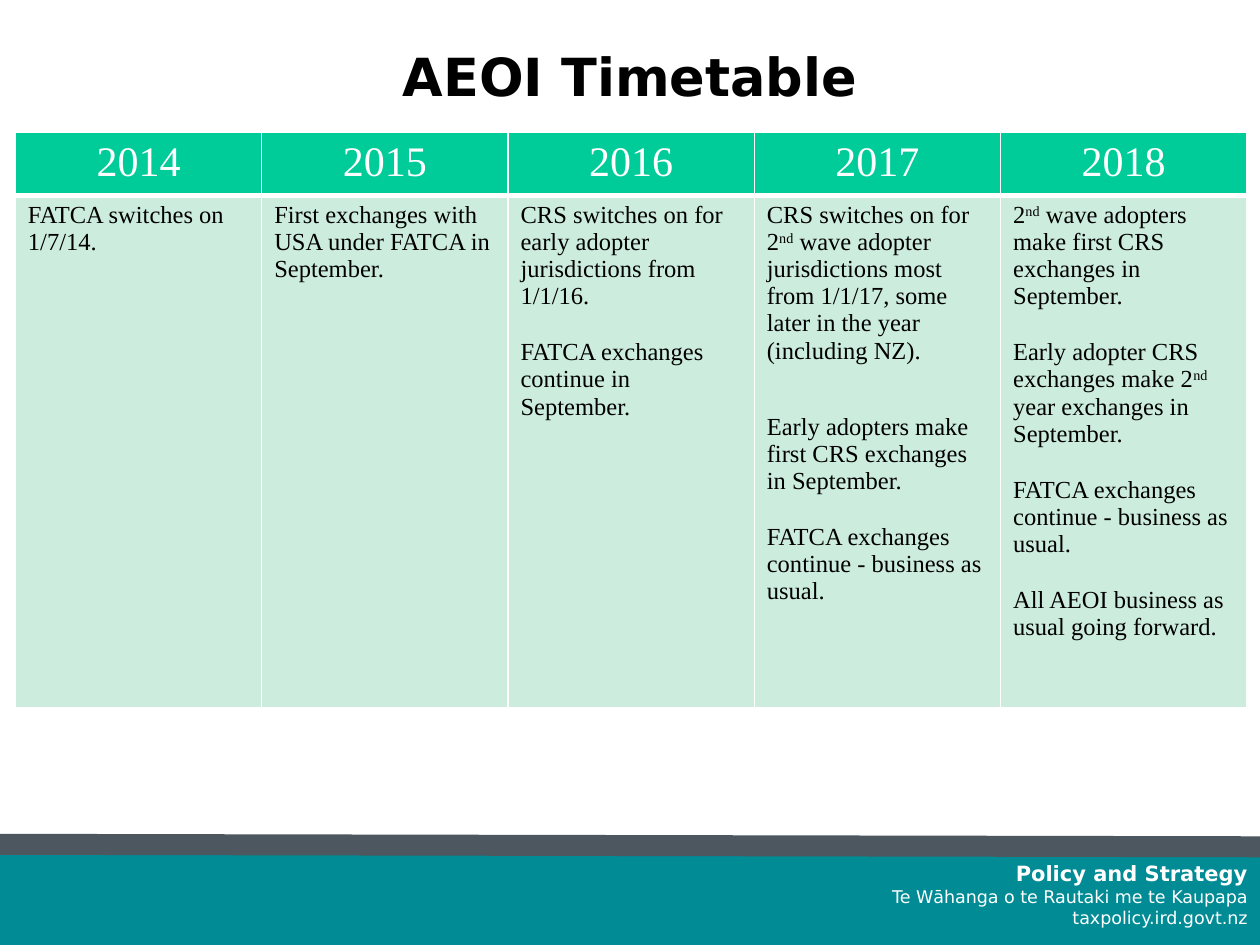
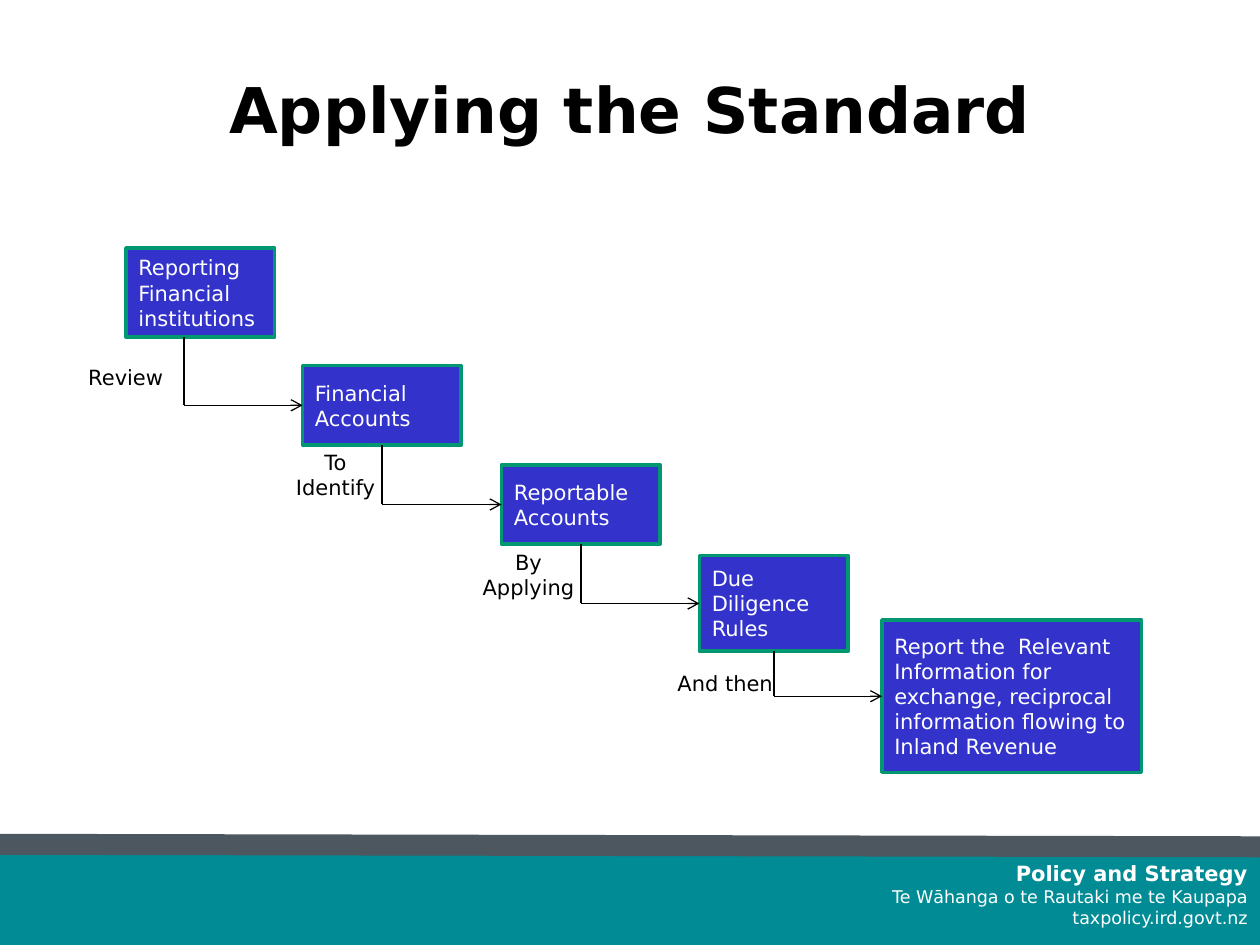
from itertools import pairwise

from lxml import etree
from pptx import Presentation
from pptx import util as u
from pptx.dml import color
from pptx.enum import shapes, text
from pptx.oxml import ns

COLOURS = {
    "teal": "008B95", "slate": "4C575F", "white": "FFFFFF", "black": "000000",
    "header": "00CC99", "mint": "CCECDE", "blue": "3333CC", "green": "009771",
}
SANS, SERIF = "DejaVu Sans", "Times New Roman"
SLIDE_WIDTH, SLIDE_HEIGHT = 25.4, 19.05

FOOTER = [
    ("Policy and Strategy", 12, True),
    ("Te Wāhanga o te Rautaki me te Kaupapa", 10, False),
    ("taxpolicy.ird.govt.nz", 10, False),
]

TIMETABLE_TITLE = ("AEOI Timetable", 0.36, 30)
TIMETABLE = {
    "2014": [("FATCA switches on 1/7/14.", 0)],
    "2015": [("First exchanges with USA under FATCA in September.", 0)],
    "2016": [
        ("CRS switches on for early adopter jurisdictions from 1/1/16.", 0),
        ("FATCA exchanges continue in September.", 16.5),
    ],
    "2017": [
        ("CRS switches on for 2^nd^ wave adopter jurisdictions most from 1/1/17, "
         "some later in the year (including NZ).", 0),
        ("Early adopters make first CRS exchanges in September.", 28),
        ("FATCA exchanges continue - business as usual.", 16.5),
    ],
    "2018": [
        ("2^nd^ wave adopters make first CRS exchanges in September.", 0),
        ("Early adopter CRS exchanges make 2^nd^ year exchanges in September.", 16.5),
        ("FATCA exchanges continue - business as usual.", 16.5),
        ("All AEOI business as usual going forward.", 16.5),
    ],
}
TIMETABLE_AT = (0.31, 2.67, 24.83)
ROW_HEIGHTS = (1.17, 10.32)

STANDARD_TITLE = ("Applying the Standard", 1.02, 36)
STEPS = [
    (["Reporting", "Financial institutions"], (2.54, 5, 3, 1.8)),
    (["Financial", "Accounts"], (6.1, 7.37, 3.2, 1.6)),
    (["Reportable Accounts"], (10.11, 9.37, 3.2, 1.6)),
    (["Due Diligence Rules"], (14.1, 11.2, 3, 1.93)),
    (["Report the  Relevant Information for exchange, reciprocal information "
      "flowing to Inland Revenue"], (17.78, 12.5, 5.23, 3.07)),
]
FIRST_DROP = 3.71
ACTIONS = [
    ("Review", (0.91, 6.81, 3.25, 1.6)),
    ("To Identify", (4.9, 8.97, 3.73, 1.2)),
    ("By Applying", (8.89, 11.02, 3.53, 1.12)),
    ("And then", (12.55, 12.5, 4.14, 2.54)),
]


def rgb(name):
    return color.RGBColor.from_string(COLOURS[name])


def cm(values):
    return [u.Cm(value) for value in values]


def apply(target, formats):
    for attribute, value in formats.items():
        setattr(target, attribute, value)


def write(frame, lines, font, size, colour, align=text.PP_ALIGN.LEFT,
          anchor=text.MSO_ANCHOR.TOP):
    apply(frame, {"word_wrap": True, "vertical_anchor": anchor})
    for index, (line, gap, points, bold) in enumerate(lines):
        paragraph = frame.add_paragraph() if index else frame.paragraphs[0]
        apply(paragraph, {"alignment": align, "space_before": u.Pt(gap)})
        for part, words in enumerate(line.split("^")):
            if not words:
                continue
            run = paragraph.add_run()
            run.text = words
            apply(run.font, {"name": font, "size": u.Pt(points or size), "bold": bold})
            run.font.color.rgb = rgb(colour)
            if part % 2:
                run._r.get_or_add_rPr().set("baseline", "30000")


def plain(lines):
    return [(line, 0, None, False) for line in lines]


def add_panel(slide, kind, at, fill=None, outline=None):
    panel = slide.shapes.add_shape(kind, *cm(at))
    panel.shadow.inherit = False
    if fill:
        panel.fill.solid()
        panel.fill.fore_color.rgb = rgb(fill)
    else:
        panel.fill.background()
    if outline:
        panel.line.color.rgb = rgb(outline)
        panel.line.width = u.Pt(2)
    else:
        panel.line.fill.background()
    return panel


def add_line(slide, start, end, colour, width, arrow=False):
    line = slide.shapes.add_connector(
        shapes.MSO_CONNECTOR.STRAIGHT, *cm(start + end))
    line.line.color.rgb = rgb(colour)
    line.line.width = u.Pt(width)
    if arrow:
        etree.SubElement(line.line._get_or_add_ln(), ns.qn("a:tailEnd"), type="arrow")
    etree.SubElement(line._element.spPr, ns.qn("a:effectLst"))


def add_slide(deck, title, top, size):
    slide = deck.slides.add_slide(deck.slide_layouts[6])
    add_panel(slide, shapes.MSO_SHAPE.RECTANGLE,
              (0, 17.17, SLIDE_WIDTH, SLIDE_HEIGHT - 17.17), "teal")
    add_line(slide, (0, 17.02), (SLIDE_WIDTH, 17.07), "slate", 12)
    footer = slide.shapes.add_textbox(*cm((16.97, 17.22, 8.43, 1.8)))
    write(footer.text_frame, [(line, 0, points, bold) for line, points, bold in FOOTER],
          SANS, 10, "white", text.PP_ALIGN.RIGHT)
    heading = slide.shapes.add_textbox(*cm((0, top, SLIDE_WIDTH, 2.34)))
    write(heading.text_frame, [(title, 0, size, True)], SANS, size, "black",
          text.PP_ALIGN.CENTER, text.MSO_ANCHOR.MIDDLE)
    return slide


def style_cell(cell, fill, bottom):
    borders = {"a:lnL": 1, "a:lnR": 1, "a:lnT": 1, "a:lnB": bottom}
    for tag, width in borders.items():
        edge = etree.SubElement(cell._tc.get_or_add_tcPr(), ns.qn(tag),
                                w=str(u.Pt(width)))
        paint = etree.SubElement(edge, ns.qn("a:solidFill"))
        etree.SubElement(paint, ns.qn("a:srgbClr"), val=COLOURS["white"])
    cell.fill.solid()
    cell.fill.fore_color.rgb = rgb(fill)


def build_timetable(deck):
    slide = add_slide(deck, *TIMETABLE_TITLE)
    timetable = slide.shapes.add_table(
        2, len(TIMETABLE), *cm(TIMETABLE_AT + (sum(ROW_HEIGHTS),))).table
    for row, height in zip(timetable.rows, ROW_HEIGHTS):
        row.height = u.Cm(height)
    for column, (year, events) in enumerate(TIMETABLE.items()):
        timetable.columns[column].width = u.Cm(TIMETABLE_AT[2] / len(TIMETABLE))
        header, body = timetable.cell(0, column), timetable.cell(1, column)
        style_cell(header, "header", 3)
        style_cell(body, "mint", 1)
        write(header.text_frame, plain([year]), SERIF, 24, "white",
              text.PP_ALIGN.CENTER)
        write(body.text_frame, [(event, gap, None, False) for event, gap in events],
              SERIF, 14, "black")


def build_standard(deck):
    slide = add_slide(deck, *STANDARD_TITLE)
    for lines, at in STEPS:
        step = add_panel(slide, shapes.MSO_SHAPE.RECTANGLE, at, "blue", "green")
        write(step.text_frame, plain(lines), SANS, 12, "white",
              anchor=text.MSO_ANCHOR.MIDDLE)
    places = [at for _, at in STEPS]
    for index, (current, following) in enumerate(pairwise(places)):
        left, top, width, height = current
        drop = left + width / 2 if index else FIRST_DROP
        corner = (drop, following[1] + following[3] / 2)
        add_line(slide, (drop, top + height), corner, "black", 0.75)
        add_line(slide, corner, (following[0], corner[1]), "black", 0.75, True)
    for action, at in ACTIONS:
        label = add_panel(slide, shapes.MSO_SHAPE.OVAL, at)
        write(label.text_frame, plain([action]), SANS, 12, "black",
              text.PP_ALIGN.CENTER, text.MSO_ANCHOR.MIDDLE)


def main():
    deck = Presentation()
    apply(deck, {"slide_width": u.Cm(SLIDE_WIDTH), "slide_height": u.Cm(SLIDE_HEIGHT)})
    build_timetable(deck)
    build_standard(deck)
    deck.save("out.pptx")


if __name__ == "__main__":
    main()
